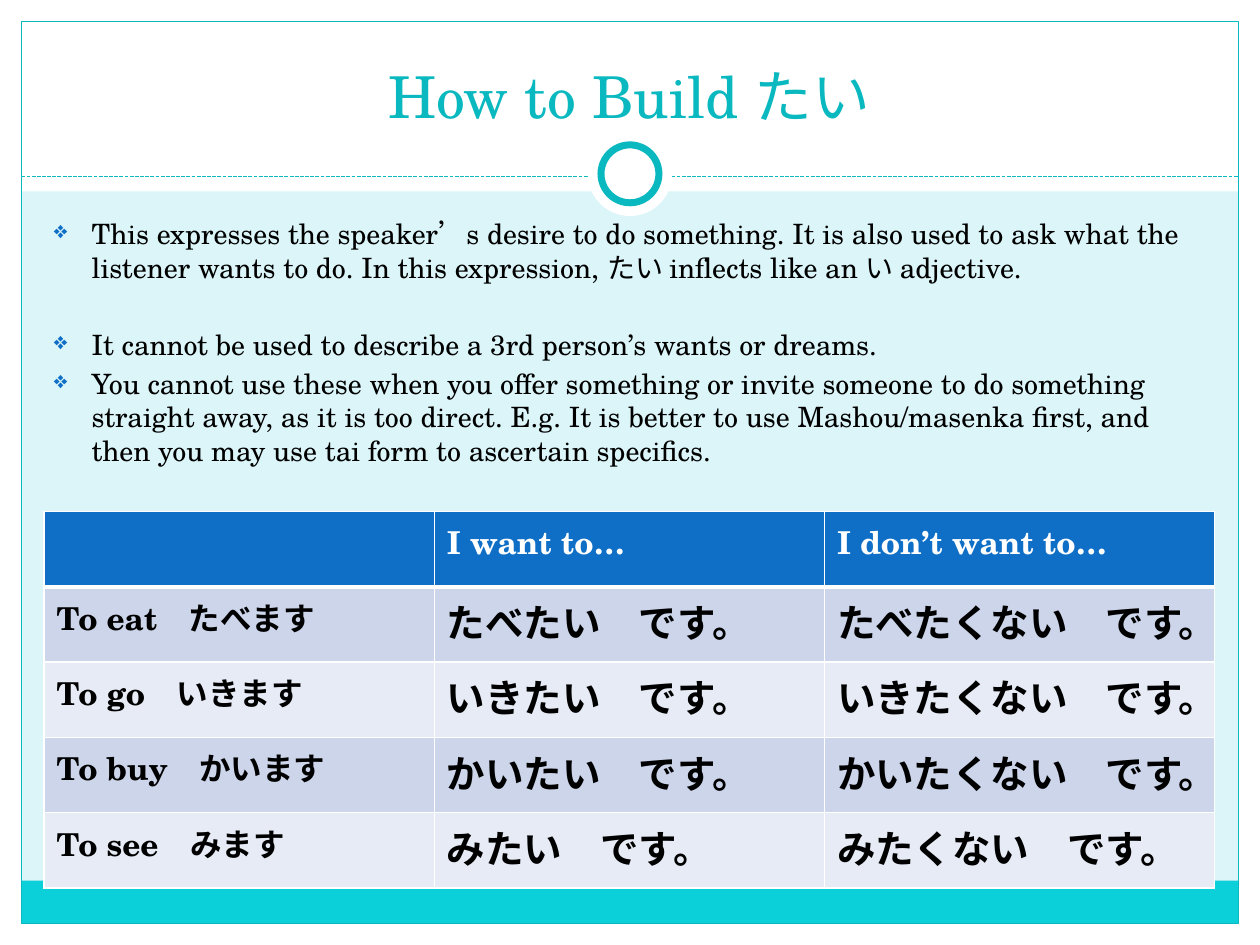
from lxml import etree
from pptx import Presentation
from pptx.dml.color import RGBColor
from pptx.enum import dml, shapes, text
from pptx.oxml.ns import qn
from pptx.util import Inches, Pt

SERIF, SANS = "TeX Gyre Schola", "Roboto"
WHITE, BLACK = "FFFFFF", "000000"
TEAL, AQUA, PALE, BLUE = "0AB8BF", "0BD0D9", "DBF5F9", "0F6FC6"
BANDS = "CCD5EA", "E7EBF5"

TITLE = "How to Build たい"
POINTS = [  # wording, space before in points
    ("This expresses the speaker’s desire to do something. It is also used to ask "
     "what the listener wants to do. In this expression, たい inflects like an い adjective.", 3),
    ("It cannot be used to describe a 3rd person’s wants or dreams.", 25),
    ("You cannot use these when you offer something or invite someone to do something "
     "straight away, as it is too direct. E.g. It is better to use Mashou/masenka first, "
     "and then you may use tai form to ascertain specifics.", 3),
]
HEADINGS = "", "I want to…", "I don’t want to…"
VERBS = [("To eat", "たべ"), ("To go", "いき"), ("To buy", "かい"), ("To see", "み")]


def rgb(color):
    return RGBColor.from_string(color)


def set_font(font, size, color, name=SERIF, bold=False):
    font.size, font.name, font.bold = Pt(size), name, bold
    font.color.rgb = rgb(color)


def add_panel(slide, box, fill=None, line=None, width=0.75, kind=shapes.MSO_SHAPE.RECTANGLE):
    panel = slide.shapes.add_shape(kind, *map(Inches, box))
    panel.shadow.inherit = False
    if fill:
        panel.fill.solid()
        panel.fill.fore_color.rgb = rgb(fill)
    else:
        panel.fill.background()
    if line:
        panel.line.color.rgb = rgb(line)
        panel.line.width = Pt(width)
    else:
        panel.line.fill.background()


def add_frame(slide, width, height):
    edge, band_bottom, rule_y = 0.17, 1.52, 1.4
    inner = width - 2 * edge
    for box in [(0, height - edge, width, edge), (0, 0, width, band_bottom),
                (0, 0, edge, height), (width - edge, 0, edge, height)]:
        add_panel(slide, box, WHITE)
    add_panel(slide, (edge, 6.99, inner, 0.34), AQUA)
    add_panel(slide, (edge, edge, inner, height - 2 * edge), line=TEAL)

    rule = slide.shapes.add_connector(
        shapes.MSO_CONNECTOR.STRAIGHT,
        *map(Inches, (edge, rule_y, width - edge, rule_y)))
    rule.line.color.rgb = rgb(TEAL)
    rule.line.width = Pt(0.75)
    rule.line.dash_style = dml.MSO_LINE.SQUARE_DOT
    etree.SubElement(rule._element.spPr, qn("a:effectLst"))

    center_y = 1.38
    for diameter, line in [(0.67, None), (0.46, TEAL)]:
        add_panel(slide, ((width - diameter) / 2, center_y - diameter / 2, diameter, diameter),
                  WHITE, line, 4, shapes.MSO_SHAPE.OVAL)


def add_text_frame(slide, box):
    frame = slide.shapes.add_textbox(*map(Inches, box)).text_frame
    frame.word_wrap = True
    return frame


def add_title(slide, box):
    frame = add_text_frame(slide, box)
    frame.vertical_anchor = text.MSO_ANCHOR.BOTTOM
    paragraph = frame.paragraphs[0]
    paragraph.text = TITLE
    paragraph.alignment = text.PP_ALIGN.CENTER
    set_font(paragraph.font, 33, TEAL)


def add_bullet(paragraph):
    properties = paragraph._p.get_or_add_pPr()
    properties.set("marL", str(Inches(0.3)))
    properties.set("indent", str(Inches(-0.3)))
    color = etree.SubElement(properties, qn("a:buClr"))
    etree.SubElement(color, qn("a:srgbClr"), val=BLUE)
    etree.SubElement(properties, qn("a:buSzPct"), val="85000")
    etree.SubElement(properties, qn("a:buChar"), char="❖")


def add_points(slide, box):
    frame = add_text_frame(slide, box)
    for index, (wording, space) in enumerate(POINTS):
        paragraph = frame.add_paragraph() if index else frame.paragraphs[0]
        paragraph.text = wording
        paragraph.space_before = Pt(space)
        add_bullet(paragraph)
        set_font(paragraph.font, 16, BLACK)


def style_cell(cell, fill, bottom=1):
    """Give the cell white borders, then its fill."""
    properties = cell._tc.get_or_add_tcPr()
    for side, width in [("lnL", 1), ("lnR", 1), ("lnT", 1), ("lnB", bottom)]:
        border = etree.SubElement(properties, qn(f"a:{side}"), w=str(Pt(width)))
        solid = etree.SubElement(border, qn("a:solidFill"))
        etree.SubElement(solid, qn("a:srgbClr"), val=WHITE)
    cell.fill.solid()
    cell.fill.fore_color.rgb = rgb(fill)


def add_verb_table(slide, box):
    table = slide.shapes.add_table(len(VERBS) + 1, len(HEADINGS), *map(Inches, box)).table
    for column, heading in enumerate(HEADINGS):
        cell = table.cell(0, column)
        style_cell(cell, BLUE, bottom=3)
        cell.text = heading
        set_font(cell.text_frame.paragraphs[0].font, 18, WHITE, bold=True)

    for row, (english, stem) in enumerate(VERBS, 1):
        fill = BANDS[(row - 1) % 2]
        verb = table.cell(row, 0)
        style_cell(verb, fill)
        for wording, name in [(english + "　", SERIF), (stem + "ます", SANS)]:
            run = verb.text_frame.paragraphs[0].add_run()
            run.text = wording
            set_font(run.font, 18, BLACK, name, True)
        for column, ending in enumerate(["たい", "たくない"], 1):
            cell = table.cell(row, column)
            style_cell(cell, fill)
            cell.text = f"{stem}{ending}　です。"
            set_font(cell.text_frame.paragraphs[0].font, 22, BLACK, SANS, True)


def main():
    width, height = 10, 7.5
    deck = Presentation()
    deck.slide_width, deck.slide_height = Inches(width), Inches(height)
    slide = deck.slides.add_slide(deck.slide_layouts[6])
    slide.background.fill.solid()
    slide.background.fill.fore_color.rgb = rgb(PALE)
    add_frame(slide, width, height)
    add_title(slide, (0.33, 0.25, 9.33, 0.83))
    add_points(slide, (0.33, 1.67, 9.3, 2.47))
    add_verb_table(slide, (0.35, 4.06, 9.29, 2.99))
    deck.save("out.pptx")


if __name__ == "__main__":
    main()
